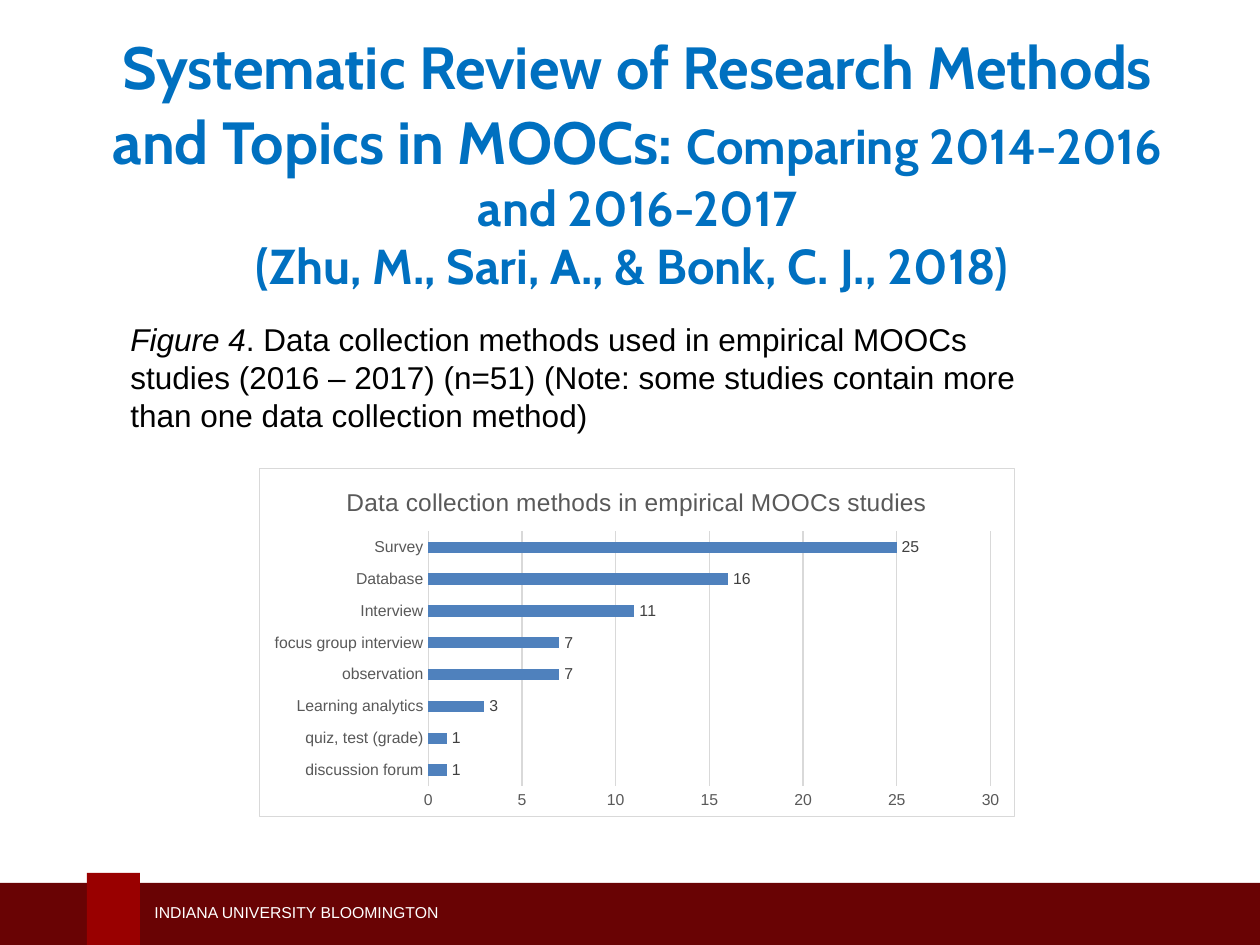
import pptx
import pptx.chart.data
import pptx.dml.color
import pptx.enum.chart
import pptx.enum.shapes
import pptx.enum.text
import pptx.oxml
import pptx.util
from dataclasses import dataclass

PX_PER_INCH = 126


@dataclass(frozen=True)
class Theme:
    head_font: str = "Cabin"
    body_font: str = "Arial"
    title: str = "0070C0"
    text: str = "000000"
    white: str = "FFFFFF"
    band: str = "690304"
    tab: str = "990000"
    bar: str = "4F81BD"
    grid: str = "D9D9D9"
    axis_text: str = "595959"
    label_text: str = "404040"
    title_pt: int = 34
    gap_pt: int = 36
    subtitle_pt: int = 28
    caption_pt: int = 18
    chart_title_pt: int = 14
    small_pt: int = 9
    line_pt: float = 0.75


THEME = Theme()


def px(n):
    return pptx.util.Emu(round(n * 914400 / PX_PER_INCH))


def rgb(value):
    return pptx.dml.color.RGBColor.from_string(value)


def style_font(font, name, size, color, bold=False, italic=False):
    font.name, font.size = name, pptx.util.Pt(size)
    font.bold, font.italic = bold, italic
    font.color.rgb = rgb(color)


def add_run(p, text, *style, **flags):
    r = p.add_run()
    r.text = text
    style_font(r.font, *style, **flags)


def add_block(s, box, color):
    sp = s.shapes.add_shape(pptx.enum.shapes.MSO_SHAPE.RECTANGLE, *map(px, box))
    sp.shadow.inherit = False
    sp.fill.solid()
    sp.fill.fore_color.rgb = rgb(color)
    sp.line.fill.background()


def add_text(s, box, anchor):
    tf = s.shapes.add_textbox(*map(px, box)).text_frame
    tf.word_wrap = True
    tf.vertical_anchor = anchor
    return tf.paragraphs[0]


def set_title(s, box):
    sp = s.shapes.title
    sp.left, sp.top, sp.width, sp.height = map(px, box)
    tf = sp.text_frame
    tf.word_wrap = True
    tf.auto_size = pptx.enum.text.MSO_AUTO_SIZE.NONE
    tf.vertical_anchor = pptx.enum.text.MSO_ANCHOR.MIDDLE
    p = tf.paragraphs[0]
    p.alignment = pptx.enum.text.PP_ALIGN.CENTER
    p.line_spacing = 1.0
    p.space_before = pptx.util.Pt(0)

    def run(text, size):
        add_run(p, text, THEME.head_font, size, THEME.title, bold=True)

    run("Systematic Review of Research Methods and Topics in MOOCs:", THEME.title_pt)
    run(" ", THEME.gap_pt)
    run("Comparing 2014-2016 and 2016-2017", THEME.subtitle_pt)
    p.add_line_break()
    run("(Zhu, M., Sari, A., & Bonk, C. J., 2018) ", THEME.subtitle_pt)


def style_line(line):
    line.color.rgb = rgb(THEME.grid)
    line.width = pptx.util.Pt(THEME.line_pt)


def style_axis(axis):
    axis.major_tick_mark = axis.minor_tick_mark = pptx.enum.chart.XL_TICK_MARK.NONE
    style_font(axis.tick_labels.font, THEME.body_font, THEME.small_pt, THEME.axis_text)


def frame_chart(chart):
    # The chart area's fill and border follow c:chart in the chart XML
    ns = 'xmlns:c="http://schemas.openxmlformats.org/drawingml/2006/chart" ' \
         'xmlns:a="http://schemas.openxmlformats.org/drawingml/2006/main"'
    width = pptx.util.Pt(THEME.line_pt)
    area = pptx.oxml.parse_xml(
        f'<c:spPr {ns}><a:solidFill><a:srgbClr val="{THEME.white}"/></a:solidFill>'
        f'<a:ln w="{int(width)}"><a:solidFill><a:srgbClr val="{THEME.grid}"/>'
        '</a:solidFill></a:ln></c:spPr>')
    chart.element.chart.addnext(area)


def add_bar_chart(s, box, title, counts):
    data = pptx.chart.data.CategoryChartData()
    data.categories = list(counts)
    data.add_series("Series 1", list(counts.values()))
    chart = s.shapes.add_chart(
        pptx.enum.chart.XL_CHART_TYPE.BAR_CLUSTERED, *map(px, box), data).chart
    style_font(chart.font, THEME.body_font, 10, THEME.text)
    frame_chart(chart)
    chart.has_legend = False

    # Heading
    chart.has_title = True
    add_run(chart.chart_title.text_frame.paragraphs[0], title,
            THEME.body_font, THEME.chart_title_pt, THEME.axis_text)
    chart.chart_title.include_in_layout = False

    # Axes
    style_axis(chart.category_axis)
    style_line(chart.category_axis.format.line)
    values = chart.value_axis
    style_axis(values)
    values.minimum_scale, values.maximum_scale, values.major_unit = 0, 30, 5
    values.format.line.fill.background()
    values.has_major_gridlines = True
    style_line(values.major_gridlines.format.line)

    # Bars and their labels
    plot = chart.plots[0]
    plot.gap_width = 182
    plot.vary_by_categories = False
    bars = plot.series[0]
    bars.format.fill.solid()
    bars.format.fill.fore_color.rgb = rgb(THEME.bar)
    labels = bars.data_labels
    labels.show_value = True
    labels.position = pptx.enum.chart.XL_LABEL_POSITION.OUTSIDE_END
    style_font(labels.font, THEME.body_font, THEME.small_pt, THEME.label_text)


def main():
    prs = pptx.Presentation()
    prs.slide_width, prs.slide_height = px(1260), px(945)
    s = prs.slides.add_slide(prs.slide_layouts[5])

    # Footer band
    add_block(s, (-4, 883, 1271, 63), THEME.band)
    add_block(s, (87, 873, 53, 73), THEME.tab)
    p = add_text(s, (142, 896, 498, 32), pptx.enum.text.MSO_ANCHOR.MIDDLE)
    add_run(p, "INDIANA UNIVERSITY BLOOMINGTON",
            THEME.body_font, THEME.small_pt, THEME.white)

    # Title and figure caption
    set_title(s, (72, 37, 1131, 251))
    p = add_text(s, (118, 314, 911, 127), pptx.enum.text.MSO_ANCHOR.TOP)
    caption = THEME.body_font, THEME.caption_pt, THEME.text
    add_run(p, "Figure 4", *caption, italic=True)
    add_run(p, ". Data collection methods used in empirical MOOCs studies "
               "(2016 – 2017) (n=51) (Note: some studies contain more than one "
               "data collection method)", *caption)

    # Chart, listed from the bottom bar up
    add_bar_chart(s, (259, 468, 756, 349),
                  "Data collection methods in empirical MOOCs studies",
                  {"discussion forum": 1, "quiz, test (grade)": 1,
                   "Learning analytics": 3, "observation": 7,
                   "focus group interview": 7, "Interview": 11,
                   "Database": 16, "Survey": 25})

    prs.save("out.pptx")


if __name__ == "__main__":
    main()
